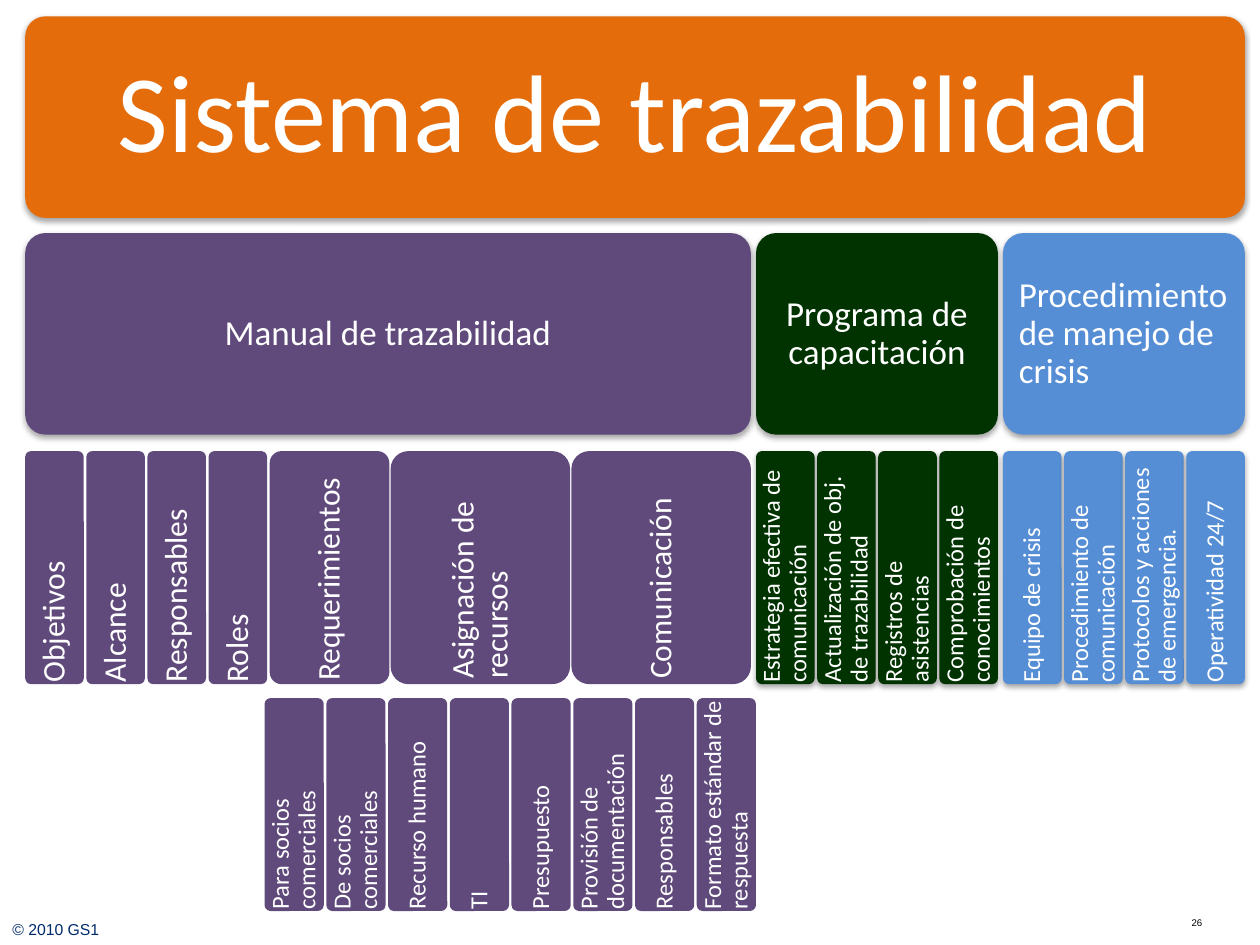
from collections import namedtuple

from lxml.etree import SubElement
from pptx import Presentation
from pptx.dml.color import RGBColor
from pptx.enum.shapes import MSO_SHAPE as Preset
from pptx.enum.text import MSO_ANCHOR as Anchor, MSO_AUTO_SIZE as AutoSize, PP_ALIGN as Align
from pptx.oxml.ns import qn
from pptx.util import Inches, Pt

Box = namedtuple("Box", "left top width height")

# Boxes are given in columns and rows of this grid.
SLIDE_WIDTH, SLIDE_HEIGHT = Inches(10), Inches(7.5)
COLUMN, ROW = SLIDE_WIDTH / 100, SLIDE_HEIGHT / 75
GAP = 0.2
LEVEL_TOP, LEVEL_HEIGHT = 18.5, 16
LEAF_TOP, LEAF_HEIGHT = 35.8, 18.5
DETAIL_TOP, DETAIL_HEIGHT = 55.4, 16.9

ORANGE, PURPLE, GREEN, BLUE = "E46C0A", "604A7B", "003300", "558ED5"
WHITE, NAVY, BLACK = "FFFFFF", "002C6C", "000000"


def color(hex_string):
    return RGBColor.from_string(hex_string)


def place(shape, box):
    shape.left, shape.width = int(box.left * COLUMN), int(box.width * COLUMN)
    shape.top, shape.height = int(box.top * ROW), int(box.height * ROW)


def write(shape, text, size, font, ink, align=Align.LEFT, spacing=1.0):
    frame = shape.text_frame
    frame.text = text
    frame.word_wrap = True
    frame.auto_size = AutoSize.NONE
    frame.vertical_anchor = Anchor.MIDDLE
    paragraph = frame.paragraphs[0]
    paragraph.alignment = align
    paragraph.line_spacing = spacing
    paragraph.space_before = Pt(0)
    paragraph.font.size = Pt(size)
    paragraph.font.name = font
    paragraph.font.color.rgb = color(ink)


def add_shadow(shape):
    effects = shape._element.spPr.find(qn("a:effectLst"))
    shadow = SubElement(effects, qn("a:outerShdw"), blurRad="40000",
                        dist="23000", dir="5400000", rotWithShape="0")
    black = SubElement(shadow, qn("a:srgbClr"), val=BLACK)
    SubElement(black, qn("a:alpha"), val="35000")


def add_panel(slide, box, fill, shadow=True):
    """Add a rounded rectangle without text and return it."""
    panel = slide.shapes.add_shape(Preset.ROUNDED_RECTANGLE, 0, 0, 0, 0)
    panel.adjustments[0] = 0.1
    place(panel, box)
    panel.fill.solid()
    panel.fill.fore_color.rgb = color(fill)
    panel.line.fill.background()
    panel.shadow.inherit = False
    if shadow:
        add_shadow(panel)
    return panel


def set_margins(frame, across, along):
    frame.margin_left = frame.margin_right = Inches(across)
    frame.margin_top = frame.margin_bottom = Inches(along)


def add_heading(slide, box, text, fill, align):
    panel = add_panel(slide, box, fill)
    write(panel, text, 20, "Calibri", WHITE, align, spacing=0.9)
    set_margins(panel.text_frame, 0.08, 0.08)


def add_leaf(slide, box, text, fill, size, shadow):
    """Add a card whose text reads upward."""
    panel = add_panel(slide, box, fill, shadow)
    write(panel, text, size, "Calibri", WHITE, spacing=0.9)
    set_margins(panel.text_frame, 0.05, 0)
    panel.text_frame._txBody.bodyPr.set("vert", "vert270")


def add_title(slide, box, text):
    """Set the title over a rounded banner."""
    banner = add_panel(slide, box, ORANGE)
    title = slide.shapes.title
    banner._element.addnext(title._element)
    place(title, box)
    write(title, text, 63, "Calibri", WHITE, Align.CENTER, spacing=0.9)
    set_margins(title.text_frame, 0.31, 0.31)


def add_leaf_row(slide, box, labels, fill, size, shadow, weights=None, gap=GAP):
    """Split the box into upright cards, equal unless weights are given."""
    weights = weights or [1] * len(labels)
    unit = (box.width - gap * (len(labels) - 1)) / sum(weights)
    left = box.left
    for label, weight in zip(labels, weights):
        width = unit * weight
        add_leaf(slide, box._replace(left=left, width=width), label, fill, size, shadow)
        left += width + gap


def add_manual(slide, left, width):
    add_heading(slide, Box(left, LEVEL_TOP, width, LEVEL_HEIGHT),
                "Manual de trazabilidad", PURPLE, Align.CENTER)
    add_leaf_row(slide, Box(left, LEAF_TOP, width / 3, LEAF_HEIGHT),
                 ["Objetivos", "Alcance", "Responsables", "Roles"], PURPLE, 18, False)
    wide_left = left + width / 3 + GAP
    add_leaf_row(slide, Box(wide_left, LEAF_TOP, left + width - wide_left, LEAF_HEIGHT),
                 ["Requerimientos", "Asignación de recursos", "Comunicación"],
                 PURPLE, 18, False, weights=[2, 3, 3], gap=0.1)
    add_leaf_row(slide, Box(21, DETAIL_TOP, 39, DETAIL_HEIGHT),
                 ["Para socios comerciales", "De socios comerciales", "Recurso humano", "TI",
                  "Presupuesto", "Provisión de documentación", "Responsables",
                  "Formato estándar de respuesta"], PURPLE, 14, False)


def add_branch(slide, left, width, heading, fill, align, leaves):
    add_heading(slide, Box(left, LEVEL_TOP, width, LEVEL_HEIGHT), heading, fill, align)
    add_leaf_row(slide, Box(left, LEAF_TOP, width, LEAF_HEIGHT), leaves, fill, 14, True)


def add_footer_text(slide, box, text, size, ink, align):
    shape = slide.shapes.add_textbox(0, 0, 0, 0)
    place(shape, box)
    write(shape, text, size, "Arial", ink, align)


def main():
    presentation = Presentation()
    presentation.slide_width, presentation.slide_height = SLIDE_WIDTH, SLIDE_HEIGHT
    slide = presentation.slides.add_slide(presentation.slide_layouts.get_by_name("Title Only"))

    add_footer_text(slide, Box(0, 72.5, 24.3, 2.5), "© 2010 GS1", 9, NAVY, Align.LEFT)
    add_footer_text(slide, Box(90, 71.5, 10, 3.5), "26", 5.5, BLACK, Align.CENTER)
    add_title(slide, Box(2, 1.3, 96.8, 16), "Sistema de trazabilidad")
    add_manual(slide, 2, 57.6)
    add_branch(slide, 60, 19.2, "Programa de capacitación", GREEN, Align.CENTER,
               ["Estrategia efectiva de comunicación", "Actualización de obj. de trazabilidad",
                "Registros de asistencias", "Comprobación de conocimientos"])
    add_branch(slide, 79.6, 19.2, "Procedimiento de manejo de crisis", BLUE, Align.LEFT,
               ["Equipo de crisis", "Procedimiento de comunicación",
                "Protocolos y acciones de emergencia.", "Operatividad 24/7"])
    presentation.save("out.pptx")


if __name__ == "__main__":
    main()
